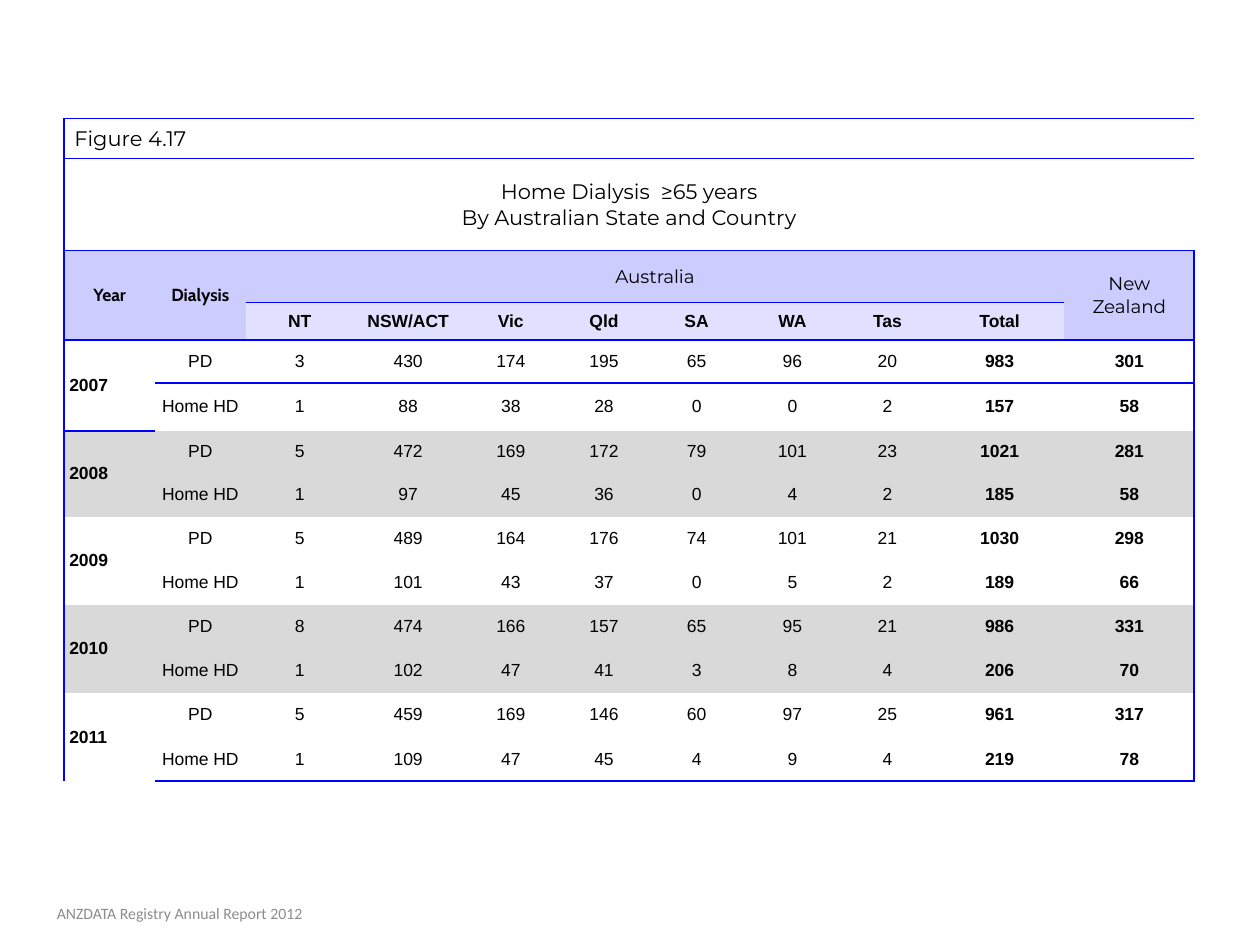
from typing import NamedTuple

from lxml.etree import SubElement
from pptx import Presentation
from pptx.dml.color import RGBColor
from pptx.enum.text import MSO_ANCHOR as Anchor, PP_ALIGN as Align
from pptx.oxml.ns import qn
from pptx.table import Table, _Cell as Cell
from pptx.text.text import TextFrame
from pptx.util import Inches, Pt

COLORS = {"line": "0000FF", "header": "CCCCFF", "state": "E1E1FF",
          "band": "D9D9D9", "text": "000000", "footer": "8C8C8C"}
NO_STYLE_NO_GRID = "{2D5ABB26-0587-4C30-8999-92F81FD0307C}"

COLUMN_WIDTHS = [0.72, 0.72, 0.86, 0.86, 0.77, 0.71, 0.76, 0.76, 0.75, 1.03, 1.03]
ROW_HEIGHTS = [0.32, 0.73, 0.41, 0.3, 0.34, 0.38, 0.33] + [0.35] * 7
LAST_ROW, LAST_COL = len(ROW_HEIGHTS) - 1, len(COLUMN_WIDTHS) - 1
FIRST_DATA_ROW, FIRST_STATE_COL, TOTAL_COL = 4, 2, 9

STATES = ["NT", "NSW/ACT", "Vic", "Qld", "SA", "WA", "Tas", "Total"]
TREATMENTS = ["PD", "Home HD"]
PATIENTS = {
    "2007": [[3, 430, 174, 195, 65, 96, 20, 983, 301],
             [1, 88, 38, 28, 0, 0, 2, 157, 58]],
    "2008": [[5, 472, 169, 172, 79, 101, 23, 1021, 281],
             [1, 97, 45, 36, 0, 4, 2, 185, 58]],
    "2009": [[5, 489, 164, 176, 74, 101, 21, 1030, 298],
             [1, 101, 43, 37, 0, 5, 2, 189, 66]],
    "2010": [[8, 474, 166, 157, 65, 95, 21, 986, 331],
             [1, 102, 47, 41, 3, 8, 4, 206, 70]],
    "2011": [[5, 459, 169, 146, 60, 97, 25, 961, 317],
             [1, 109, 47, 45, 4, 9, 4, 219, 78]],
}


class Style(NamedTuple):
    font: str
    size: float
    bold: bool = False
    align: Align = Align.CENTER
    space_after: float = 0
    color: str = "text"


class Entry(NamedTuple):
    row: int
    col: int
    text: str
    style: Style
    fill: str = ""
    rows: int = 1
    cols: int = 1


CAPTION = Style("Montserrat", 12, align=Align.LEFT)
TITLE = Style("Montserrat", 12)
KEY_HEAD = Style("Cabin", 10, bold=True)
COUNTRY = Style("Montserrat", 10.5)
VALUE = Style("Arial", 10, space_after=14)
STRONG = VALUE._replace(bold=True)
YEAR = STRONG._replace(align=Align.LEFT)
FOOTER = Style("Calibri", 9, color="footer")


def write(frame: TextFrame, text: str, style: Style) -> None:
    frame.text = text
    font_format = {"name": style.font, "size": Pt(style.size), "bold": style.bold}
    for paragraph in frame.paragraphs:
        paragraph.alignment = style.align
        if style.space_after:
            paragraph.space_after = Pt(style.space_after)
        for run in paragraph.runs:
            for name, value in font_format.items():
                setattr(run.font, name, value)
            run.font.color.rgb = RGBColor.from_string(COLORS[style.color])


def draw_borders(cell: Cell, row: int, col: int) -> None:
    """Frame the table and rule off its heading rows."""
    under_australia = FIRST_STATE_COL <= col <= TOTAL_COL
    sides = {
        "a:lnL": col == 0,
        "a:lnR": col == LAST_COL,
        "a:lnT": row in (0, 1, 2, 4) or (row == 3 and under_australia),
        "a:lnB": row in (0, 1, 3, LAST_ROW) or (row == 2 and under_australia),
    }
    properties = cell._tc.get_or_add_tcPr()
    for tag, shown in sides.items():
        if shown:
            line = SubElement(properties, qn(tag), w=str(Pt(1)))
            solid = SubElement(line, qn("a:solidFill"))
            SubElement(solid, qn("a:srgbClr"), val=COLORS["line"])


def fill_entry(table: Table, entry: Entry) -> None:
    cell = table.cell(entry.row, entry.col)
    if entry.rows > 1 or entry.cols > 1:
        cell.merge(table.cell(entry.row + entry.rows - 1, entry.col + entry.cols - 1))
    if entry.fill:
        cell.fill.solid()
        cell.fill.fore_color.rgb = RGBColor.from_string(COLORS[entry.fill])
    else:
        cell.fill.background()
    write(cell.text_frame, entry.text, entry.style)


def heading_entries() -> list[Entry]:
    width = LAST_COL + 1
    headings = [
        Entry(0, 0, "Figure 4.17", CAPTION, cols=width),
        Entry(1, 0, "Home Dialysis  ≥65 years\nBy Australian State and Country",
              TITLE, cols=width),
        Entry(2, 0, "Year", KEY_HEAD, "header", rows=2),
        Entry(2, 1, "Dialysis", KEY_HEAD, "header", rows=2),
        Entry(2, FIRST_STATE_COL, "Australia", COUNTRY, "header", cols=len(STATES)),
        Entry(2, LAST_COL, "New\nZealand", COUNTRY, "header", rows=2),
    ]
    return headings + [Entry(3, col, state, STRONG, "state")
                       for col, state in enumerate(STATES, FIRST_STATE_COL)]


def year_entries() -> list[Entry]:
    entries = []
    for index, (year, counts) in enumerate(PATIENTS.items()):
        top = FIRST_DATA_ROW + 2 * index
        band = "band" if index % 2 else ""
        entries.append(Entry(top, 0, year, YEAR, band, rows=2))
        for row, (treatment, values) in enumerate(zip(TREATMENTS, counts), top):
            entries.append(Entry(row, 1, treatment, VALUE, band))
            for col, value in enumerate(values, FIRST_STATE_COL):
                style = STRONG if col >= TOTAL_COL else VALUE
                entries.append(Entry(row, col, str(value), style, band))
    return entries


def main() -> None:
    deck = Presentation()
    deck.slide_width, deck.slide_height = Inches(10), Inches(7.5)
    slide = deck.slides.add_slide(deck.slide_layouts[6])

    # Footer
    footer = slide.shapes.add_textbox(Inches(-0.04), Inches(7.05),
                                      Inches(2.93), Inches(0.4)).text_frame
    footer.word_wrap = True
    footer.vertical_anchor = Anchor.MIDDLE
    write(footer, "ANZDATA Registry Annual Report 2012", FOOTER)

    # Table grid
    frame = slide.shapes.add_table(LAST_ROW + 1, LAST_COL + 1, Inches(0.51),
                                   Inches(0.94), Inches(8.98), Inches(5.25))
    table = frame.table
    table.first_row = table.horz_banding = False
    table._tbl.tblPr.find(qn("a:tableStyleId")).text = NO_STYLE_NO_GRID
    for column, width in zip(table.columns, COLUMN_WIDTHS):
        column.width = Inches(width)

    # Cell margins and borders
    for row, height in enumerate(ROW_HEIGHTS):
        table.rows[row].height = Inches(height)
        side, edge = (0.08, 0) if row == 0 else (0.04, 0.04)
        cell_format = {"margin_left": Inches(side), "margin_right": Inches(side),
                       "margin_top": Inches(edge), "margin_bottom": Inches(edge),
                       "vertical_anchor": Anchor.MIDDLE}
        for col in range(LAST_COL + 1):
            cell = table.cell(row, col)
            for name, value in cell_format.items():
                setattr(cell, name, value)
            draw_borders(cell, row, col)

    # Headings and yearly counts
    for entry in heading_entries() + year_entries():
        fill_entry(table, entry)

    deck.save("out.pptx")


if __name__ == "__main__":
    main()
